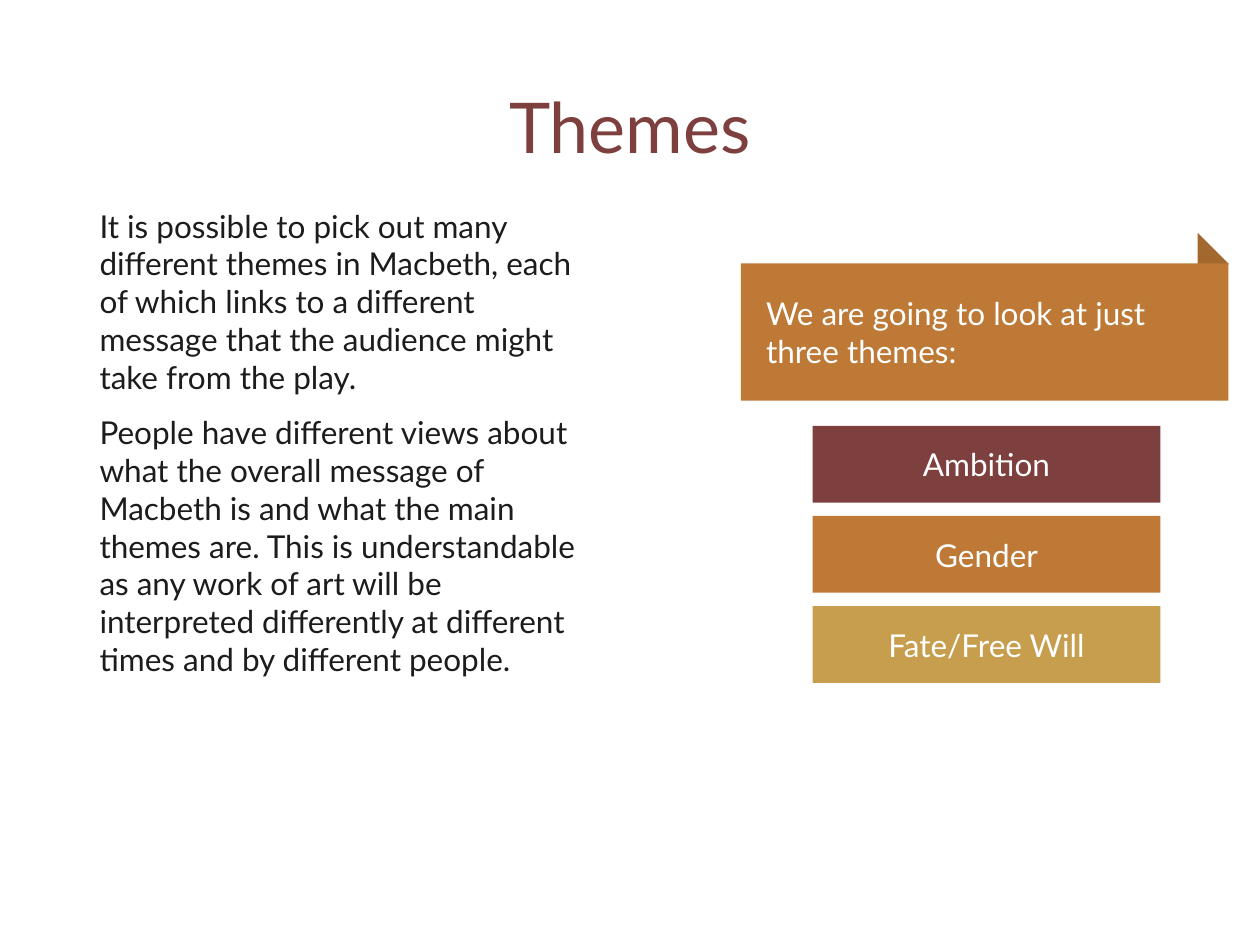
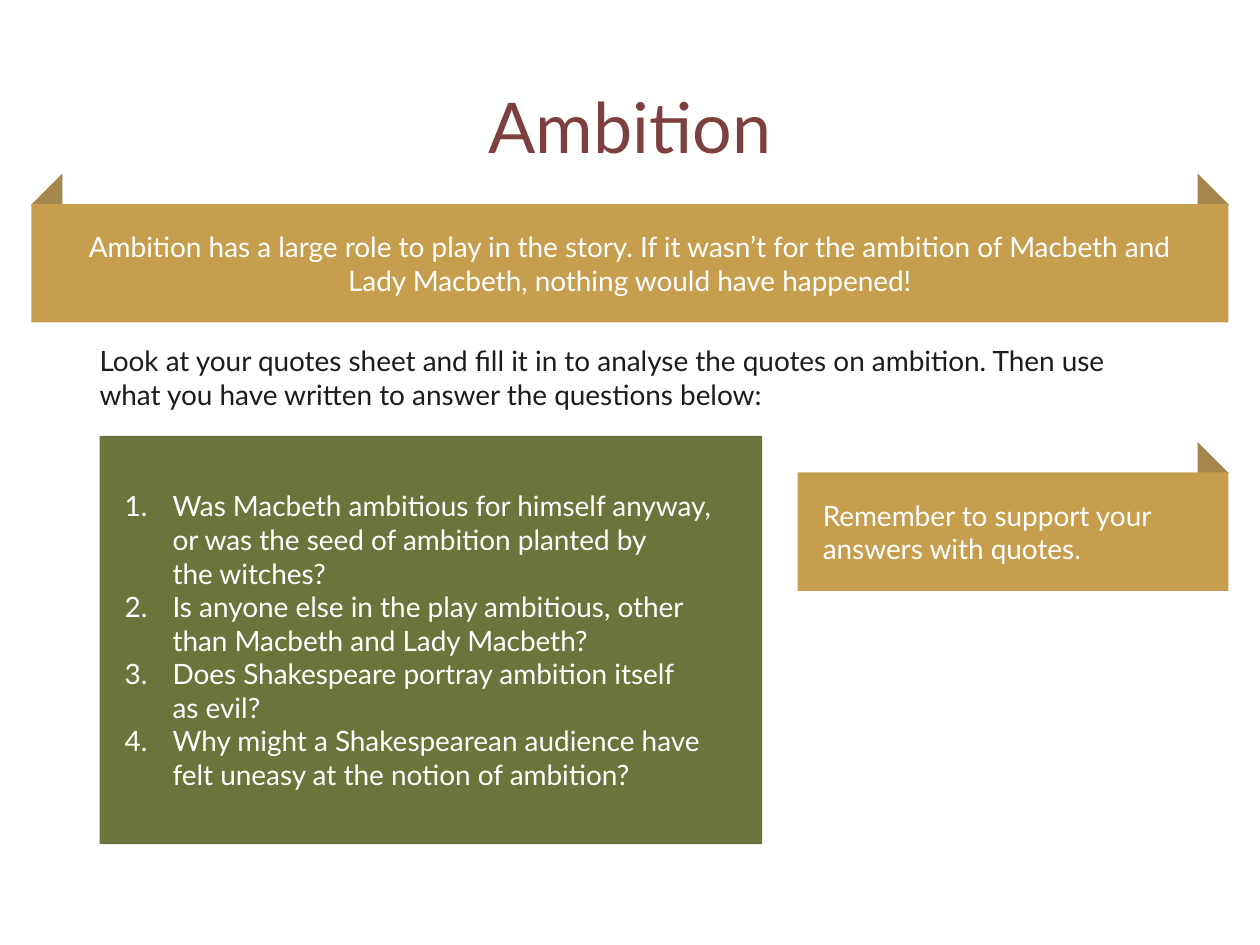
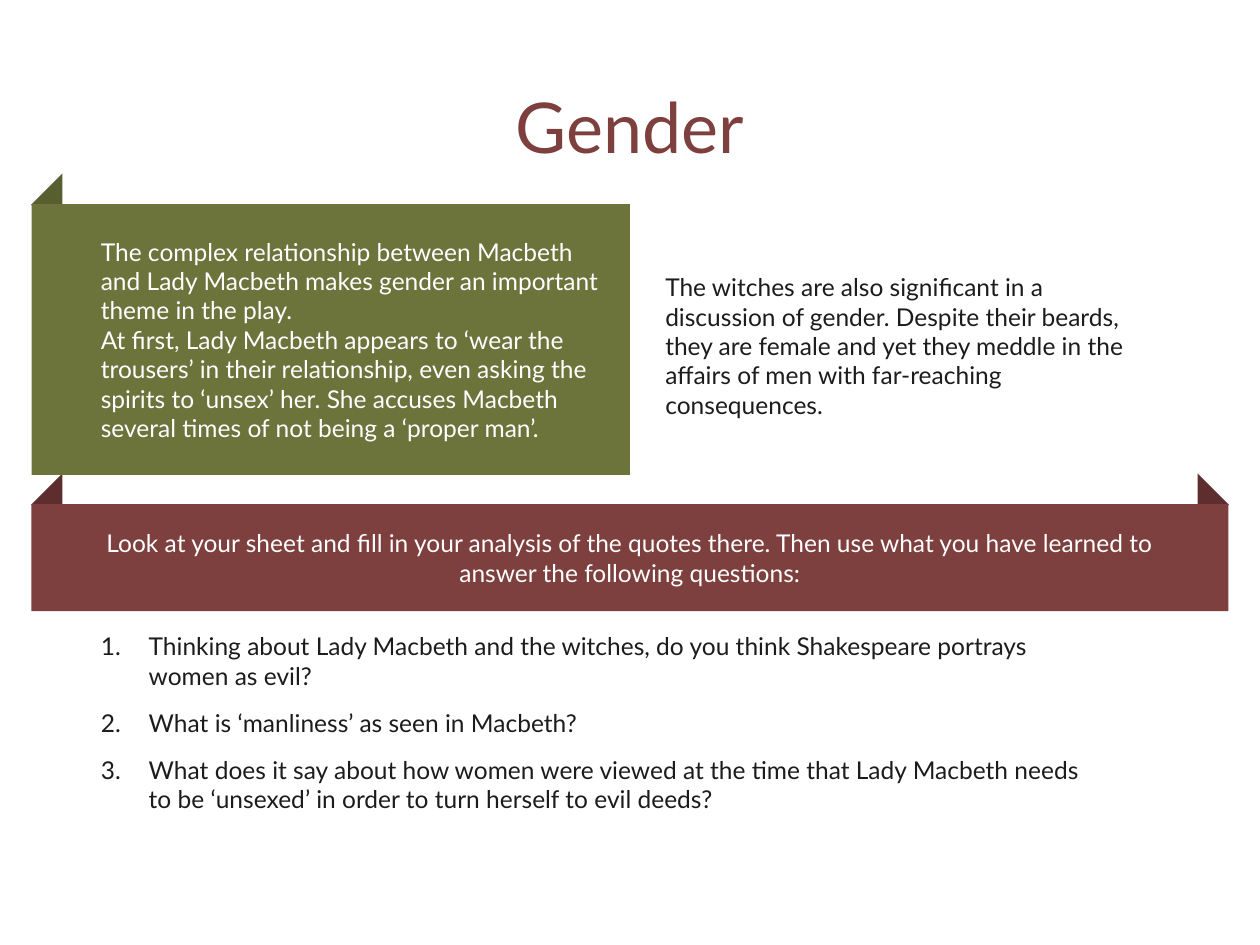
from lxml import etree
from pptx import Presentation
from pptx.dml.color import RGBColor
from pptx.enum import shapes, text
from pptx.oxml import ns
from pptx.util import Inches, Pt

# Shared style
FONT = "Lato"
WHITE = RGBColor(0xFF, 0xFF, 0xFF)
INK = RGBColor(0x1C, 0x1C, 0x1C)
MAROON = RGBColor(0x7E, 0x40, 0x3E)
MAROON_FOLD = RGBColor(0x5D, 0x2E, 0x2D)
ORANGE = RGBColor(0xBD, 0x79, 0x35)
ORANGE_FOLD = RGBColor(0xA2, 0x68, 0x2E)
GOLD = RGBColor(0xC6, 0x9E, 0x4E)
GOLD_FOLD = RGBColor(0xA5, 0x86, 0x4D)
OLIVE = RGBColor(0x6C, 0x74, 0x3C)
OLIVE_FOLD = RGBColor(0x57, 0x5E, 0x30)

LEFT, CENTER = text.PP_ALIGN.LEFT, text.PP_ALIGN.CENTER
TOP, MIDDLE = text.MSO_ANCHOR.TOP, text.MSO_ANCHOR.MIDDLE
TITLE_BOX = (0.51, 0.5, 8.98, 1.05)
TITLE_INSETS = (0.28, 0.24, 0.28, 0)
BODY_INSETS = (0.28, 0.16, 0.28, 0.16)
FOLD_SIZE, FOLD_INSET, FOLD_RISE = 0.35, 0.07, 0.17
LIST_INDENT = 0.38
TITLE_AND_BODY, TITLE_AND_TWO_BODIES = 1, 3


def set_bullet(paragraph, numbered):
    """Number the paragraph, or clear the bullet it inherits."""
    properties = paragraph._p.get_or_add_pPr()
    indent = Inches(LIST_INDENT) if numbered else 0
    properties.set("marL", str(indent))
    properties.set("indent", str(-indent))
    tag = "a:buAutoNum" if numbered else "a:buNone"
    bullet = etree.SubElement(properties, ns.qn(tag))
    if numbered:
        bullet.set("type", "arabicPeriod")


def write(shape, lines, size, color, insets, align=LEFT, anchor=TOP,
          numbered=False, gap=0, line_spacing=1.0):
    frame = shape.text_frame
    frame.word_wrap = True
    frame.auto_size = text.MSO_AUTO_SIZE.NONE
    frame.vertical_anchor = anchor
    (frame.margin_left, frame.margin_top,
     frame.margin_right, frame.margin_bottom) = map(Inches, insets)
    frame.text = "\n".join(lines)
    for index, paragraph in enumerate(frame.paragraphs):
        set_bullet(paragraph, numbered)
        paragraph.alignment = align
        paragraph.line_spacing = line_spacing
        paragraph.space_before = Pt(gap if index else 0)
        for run in paragraph.runs:
            run.font.name = FONT
            run.font.size = Pt(size)
            run.font.color.rgb = color


def place(shape, box):
    shape.left, shape.top, shape.width, shape.height = map(Inches, box)


def add_titled_slide(presentation, layout, title):
    slide = presentation.slides.add_slide(presentation.slide_layouts[layout])
    place(slide.shapes.title, TITLE_BOX)
    write(slide.shapes.title, [title], 40, MAROON, TITLE_INSETS, CENTER,
          line_spacing=0.9)
    return slide


def fill_body(slide, index, box, lines, size, numbered=False):
    body = slide.placeholders[index]
    place(body, box)
    write(body, lines, size, INK, BODY_INSETS, numbered=numbered, gap=10)


def add_block(slide, kind, box, color):
    shape = slide.shapes.add_shape(kind, *map(Inches, box))
    shape.shadow.inherit = False
    shape.fill.solid()
    shape.fill.fore_color.rgb = color
    shape.line.fill.background()
    return shape


def add_panel(slide, box, color, lines, size, insets=(0.1, 0.05, 0.1, 0.05),
              align=LEFT, numbered=False):
    panel = add_block(slide, shapes.MSO_SHAPE.RECTANGLE, box, color)
    write(panel, lines, size, WHITE, insets, align, MIDDLE, numbered)


def add_ribbon(slide, box, color, fold_color, sides, lines, size, margins,
               align=LEFT):
    """A panel with folded corners above its left and/or right end."""
    left, top, width, _ = box
    folds = {"left": (left + FOLD_INSET, 45),
             "right": (left + width - FOLD_INSET - FOLD_SIZE, 225)}
    for side in sides:
        fold_left, rotation = folds[side]
        fold_box = (fold_left, top - FOLD_RISE, FOLD_SIZE, FOLD_SIZE)
        fold = add_block(slide, shapes.MSO_SHAPE.RIGHT_TRIANGLE, fold_box,
                         fold_color)
        fold.rotation = rotation
    margin_left, margin_right = margins
    add_panel(slide, box, color, lines, size,
              (margin_left, 0.05, margin_right, 0.05), align)


def add_theme_stack(slide, box, pitch, themes):
    left, top, width, height = box
    for index, (name, color) in enumerate(themes):
        add_panel(slide, (left, top + index * pitch, width, height), color,
                  [name], 18, align=CENTER)


def build_themes(presentation):
    slide = add_titled_slide(presentation, TITLE_AND_BODY, "Themes")
    fill_body(slide, 1, (0.51, 1.48, 4.49, 5.54), [
        "It is possible to pick out many different themes in Macbeth, each of "
        "which links to a different message that the audience might take from "
        "the play.",
        "People have different views about what the overall message of Macbeth "
        "is and what the main themes are. This is understandable as any work "
        "of art will be interpreted differently at different times and by "
        "different people.",
    ], 18)
    add_ribbon(slide, (5.88, 2.09, 3.87, 1.09), ORANGE, ORANGE_FOLD, ["right"],
               ["We are going to look at just three themes:"], 18, (0.2, 0.31))
    add_theme_stack(slide, (6.45, 3.38, 2.76, 0.61), 0.715, [
        ("Ambition", MAROON), ("Gender", ORANGE), ("Fate/Free Will", GOLD)])


def build_ambition(presentation):
    slide = add_titled_slide(presentation, TITLE_AND_BODY, "Ambition")
    fill_body(slide, 1, (0.51, 2.57, 8.98, 0.89), [
        "Look at your quotes sheet and fill it in to analyse the quotes on "
        "ambition. Then use what you have written to answer the questions "
        "below:"], 16)
    add_ribbon(slide, (0.25, 1.62, 9.5, 0.94), GOLD, GOLD_FOLD,
               ["left", "right"], [
        "Ambition has a large role to play in the story. If it wasn’t for the "
        "ambition of Macbeth and Lady Macbeth, nothing would have happened!"],
        16, (0.43, 0.43), CENTER)
    add_panel(slide, (0.79, 3.46, 5.26, 3.24), OLIVE, [
        "Was Macbeth ambitious for himself anyway, or was the seed of ambition "
        "planted by \vthe witches?",
        "Is anyone else in the play ambitious, other than Macbeth and Lady "
        "Macbeth?",
        "Does Shakespeare portray ambition itself \vas evil?",
        "Why might a Shakespearean audience have felt uneasy at the notion of "
        "ambition?",
    ], 16, (0.2, 0.05, 0.2, 0.05), numbered=True)
    add_ribbon(slide, (6.33, 3.75, 3.42, 0.94), GOLD, GOLD_FOLD, ["right"],
               ["Remember to support your answers with quotes."], 16,
               (0.2, 0.43))


def build_gender(presentation):
    slide = add_titled_slide(presentation, TITLE_AND_TWO_BODIES, "Gender")
    fill_body(slide, 1, (5, 2, 4.49, 2.41), [
        "The witches are also significant in a discussion of gender. Despite "
        "their beards, they are female and yet they meddle in the affairs of "
        "men with far-reaching consequences."], 14)
    fill_body(slide, 2, (0.52, 4.85, 8.44, 2.78), [
        "Thinking about Lady Macbeth and the witches, do you think Shakespeare "
        "portrays women as evil?",
        "What is ‘manliness’ as seen in Macbeth?",
        "What does it say about how women were viewed at the time that Lady "
        "Macbeth needs to be ‘unsexed’ in order to turn herself to evil deeds?",
    ], 14, numbered=True)
    add_ribbon(slide, (0.25, 4, 9.5, 0.85), MAROON, MAROON_FOLD,
               ["left", "right"], [
        "Look at your sheet and fill in your analysis of the quotes there. "
        "Then use what you have learned to answer the following questions:"],
        14, (0.55, 0.55), CENTER)
    add_ribbon(slide, (0.25, 1.62, 4.75, 2.15), OLIVE, OLIVE_FOLD, ["left"], [
        "The complex relationship between Macbeth and Lady Macbeth makes "
        "gender an important theme in the play. \vAt first, Lady Macbeth "
        "appears to ‘wear the trousers’ in their relationship, even asking the "
        "spirits to ‘unsex’ her. She accuses Macbeth several times of not "
        "being a ‘proper man’."], 14, (0.55, 0.2))


def main():
    presentation = Presentation()
    presentation.slide_width = Inches(10)
    presentation.slide_height = Inches(7.5)
    build_themes(presentation)
    build_ambition(presentation)
    build_gender(presentation)
    presentation.save("out.pptx")


if __name__ == "__main__":
    main()
